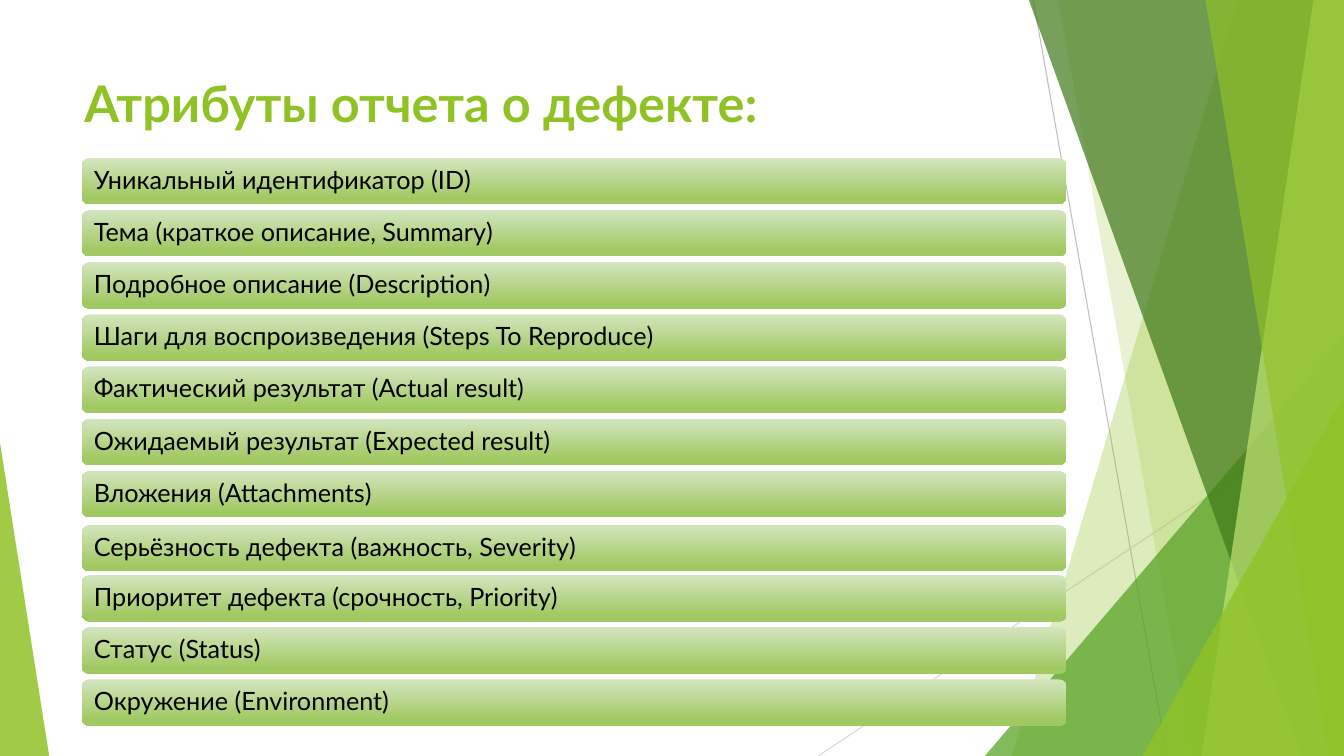
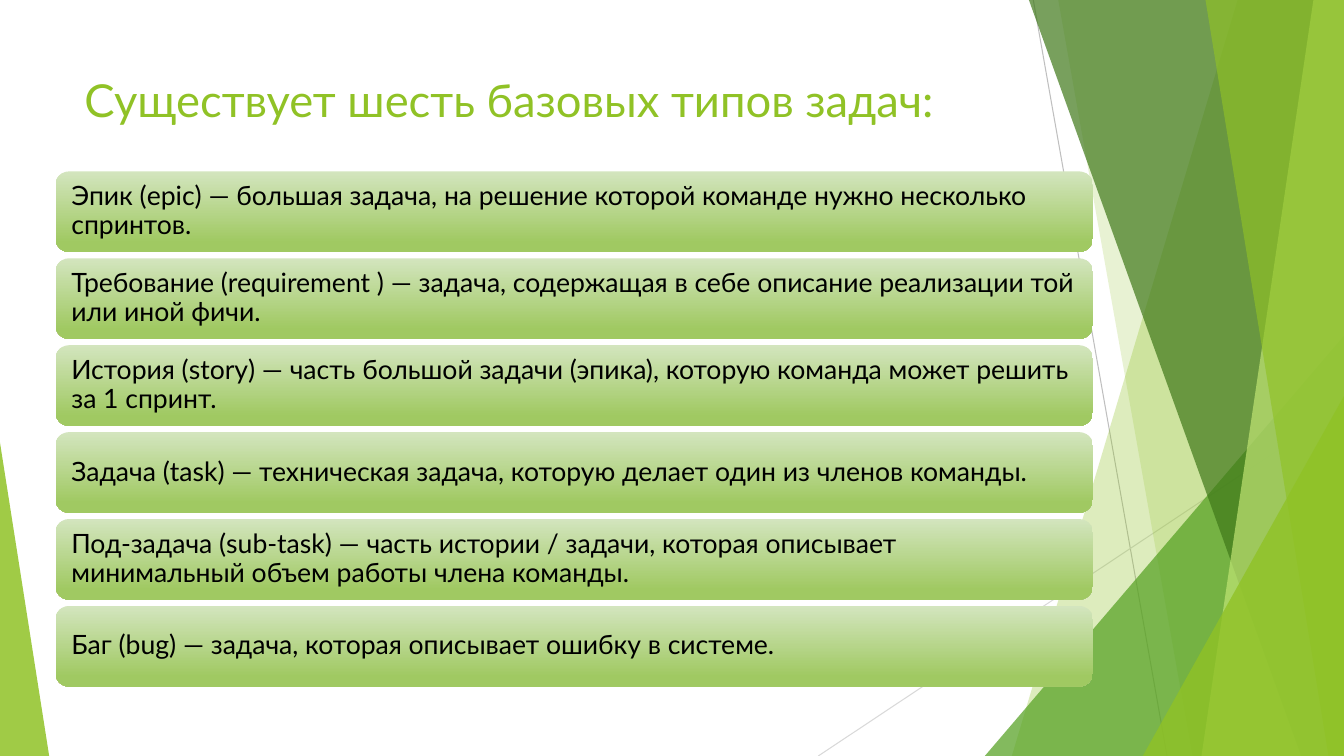
import lxml.etree
import pptx
import pptx.dml.color
import pptx.enum.shapes
import pptx.enum.text
import pptx.oxml.ns
import pptx.util

Cm = pptx.util.Cm
SHAPES = pptx.enum.shapes.MSO_SHAPE
ANCHOR = pptx.enum.text.MSO_ANCHOR
qn = pptx.oxml.ns.qn

WIDTH, HEIGHT = 33.87, 19.05


def colour(code):
    return pptx.dml.color.RGBColor.from_string(code)


def apply(target, formats):
    for name, value in formats.items():
        setattr(target, name, value)


class Slides:
    """Holds the shared style and the current page."""

    font = "Lato"
    lime, green, forest, pale = "90C226", "54A021", "3F7819", "C0E474"
    bar_stops = ((0, "D3E5BE"), (0.88, "A0C962"))

    def __init__(self):
        self.deck = pptx.Presentation()
        apply(self.deck, {"slide_width": Cm(WIDTH), "slide_height": Cm(HEIGHT)})
        self.page = None

    def new_page(self, title, size, bold=False):
        self.page = self.deck.slides.add_slide(self.deck.slide_layouts[6])
        self.backdrop()
        box = self.page.shapes.add_textbox(Cm(1.88), Cm(1.7), Cm(23.88), Cm(2.13))
        self.label(box, title, {"size": pptx.util.Pt(size), "bold": bold}, self.lime)

    # Backdrop elements
    def line(self, start, end, code):
        line = self.page.shapes.add_connector(
            pptx.enum.shapes.MSO_CONNECTOR.STRAIGHT, *map(Cm, start + end))
        line.line.color.rgb = colour(code)
        line.line.width = pptx.util.Pt(0.75)
        lxml.etree.SubElement(line._element.spPr, qn("a:effectLst"))

    def tint(self, shape, code, opacity):
        shape.shadow.inherit = False
        shape.line.fill.background()
        shape.fill.solid()
        shape.fill.fore_color.rgb = colour(code)
        node = next(shape._element.iter(qn("a:srgbClr")))
        lxml.etree.SubElement(node, qn("a:alpha"), val=str(opacity * 1000))

    def facet(self, top_x, bottom_x, code, opacity):
        """Fill from a slanted edge to the right side of the page."""
        outline = self.page.shapes.build_freeform(Cm(top_x), 0)
        corners = ((WIDTH, 0), (WIDTH, HEIGHT), (bottom_x, HEIGHT))
        outline.add_line_segments([(Cm(x), Cm(y)) for x, y in corners])
        self.tint(outline.convert_to_shape(), code, opacity)

    def triangle(self, left, top, width, apex, code, opacity):
        """Right-angled triangle standing on the bottom edge."""
        shape = self.page.shapes.add_shape(
            SHAPES.ISOSCELES_TRIANGLE, Cm(left), Cm(top), Cm(width), Cm(HEIGHT - top))
        shape.adjustments[0] = apex
        self.tint(shape, code, opacity)

    def backdrop(self):
        self.line((26.04, 0), (29.41, HEIGHT), "BFBFBF")
        self.line((WIDTH, 10.24), (20.62, HEIGHT), "D9D9D9")
        self.facet(31.19, 25.5, self.lime, 30)
        self.facet(26.67, 30.05, self.lime, 20)
        self.triangle(24.82, 8.46, 9.05, 1, self.green, 72)
        self.facet(25.93, 32.79, self.forest, 70)
        self.facet(33.1, 30.28, self.pale, 70)
        self.facet(30.38, 33.48, self.lime, 65)
        self.triangle(28.8, 9.98, 5.07, 1, self.lime, 80)
        self.triangle(0, 11.15, 1.24, 0, self.lime, 85)

    # Text and bars
    def label(self, box, text, formats, code, spacing=1.0):
        box.text_frame.word_wrap = True
        para = box.text_frame.paragraphs[0]
        apply(para, {"alignment": pptx.enum.text.PP_ALIGN.LEFT, "line_spacing": spacing})
        span = para.add_run()
        span.text = text
        apply(span.font, {"name": self.font, **formats})
        span.font.color.rgb = colour(code)

    def bar(self, text, left, top, width, height, inset, size):
        box = self.page.shapes.add_shape(
            SHAPES.ROUNDED_RECTANGLE, Cm(left), Cm(top), Cm(width), Cm(height))
        box.shadow.inherit = False
        box.line.fill.background()
        box.fill.gradient()
        box.fill.gradient_angle = 270
        for stop, (position, code) in zip(box.fill.gradient_stops, self.bar_stops):
            stop.position = position
            stop.color.rgb = colour(code)
        apply(box.text_frame, {
            "margin_left": Cm(inset), "margin_right": Cm(inset),
            "margin_top": 0, "margin_bottom": 0, "vertical_anchor": ANCHOR.MIDDLE})
        self.label(box, text, {"size": pptx.util.Pt(size)}, "000000", 0.9)

    def bar_list(self, texts, first, last, nudges=None, **formats):
        """Spread bars evenly between the first and last top edge."""
        pitch = (last - first) / (len(texts) - 1)
        for index, text in enumerate(texts):
            top = first + index * pitch + (nudges or {}).get(index, 0)
            self.bar(text, top=top, **formats)


ATTRIBUTES = (
    "Уникальный идентификатор (ID)",
    "Тема (краткое описание, Summary)",
    "Подробное описание (Description)",
    "Шаги для воспроизведения (Steps To Reproduce)",
    "Фактический результат (Actual result)",
    "Ожидаемый результат (Expected result)",
    "Вложения (Attachments)",
    "Серьёзность дефекта (важность, Severity)",
    "Приоритет дефекта (срочность, Priority)",
    "Статус (Status)",
    "Окружение (Environment)",
)
TASK_TYPES = (
    "Эпик (epic) — большая задача, на решение которой команде нужно несколько спринтов.",
    "Требование (requirement ) — задача, содержащая в себе описание реализации "
    "той или иной фичи.",
    "История (story) — часть большой задачи (эпика), которую команда может решить "
    "за 1 спринт.",
    "Задача (task) — техническая задача, которую делает один из членов команды.",
    "Под-задача (sub-task) — часть истории / задачи, которая описывает минимальный "
    "объем работы члена команды.",
    "Баг (bug) — задача, которая описывает ошибку в системе.",
)


def main():
    slides = Slides()

    # Defect report attributes; the severity bar sits slightly lower
    slides.new_page("Атрибуты отчета о дефекте:", 36, bold=True)
    slides.bar_list(ATTRIBUTES, 3.98, 17.12, nudges={7: 0.05},
                    left=2.06, width=24.82, height=1.17, inset=0.25, size=18)

    # Task types
    slides.new_page("Существует шесть базовых типов задач:", 32.4)
    slides.bar_list(TASK_TYPES, 4.32, 15.27,
                    left=1.4, width=26.14, height=2.03, inset=0.3, size=19)

    slides.deck.save("out.pptx")


if __name__ == "__main__":
    main()
